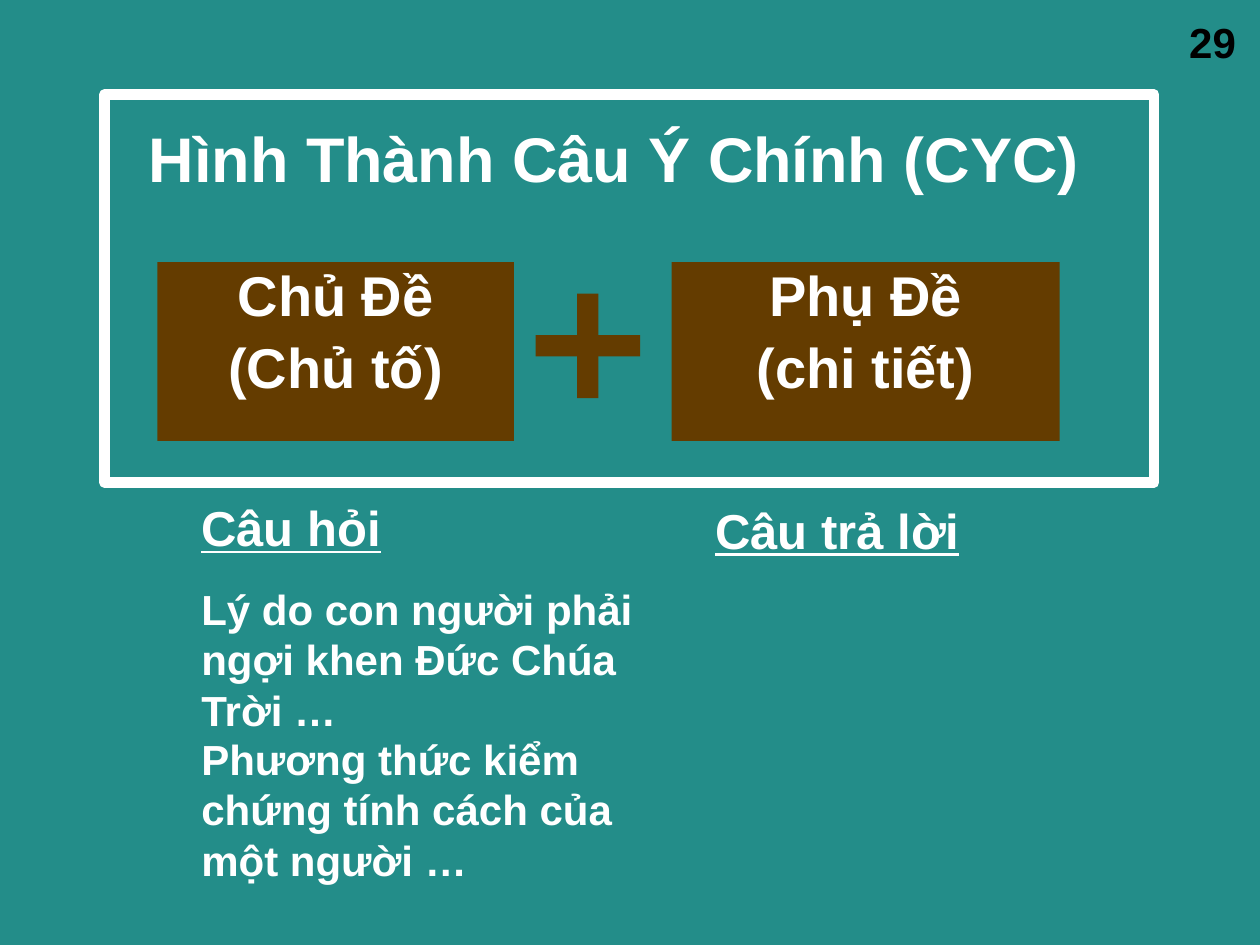
from lxml import etree
from pptx import Presentation
from pptx.dml.color import RGBColor
from pptx.enum.shapes import MSO_SHAPE as Shape
from pptx.enum.text import MSO_ANCHOR as Anchor, MSO_AUTO_SIZE as AutoSize, PP_ALIGN as Align
from pptx.oxml.ns import qn
from pptx.util import Inches, Pt

TEAL = RGBColor(0x23, 0x8D, 0x89)
BROWN = RGBColor(0x64, 0x3C, 0x00)
WHITE = RGBColor(0xFF, 0xFF, 0xFF)
BLACK = RGBColor(0x00, 0x00, 0x00)


def inches(*lengths):
    return [Inches(length) for length in lengths]


def cast_text_shadow(run):
    fill = run.font.fill._xPr.find(qn("a:solidFill"))
    effects = etree.Element(qn("a:effectLst"))
    shadow = etree.SubElement(effects, qn("a:outerShdw"), blurRad="38100",
                              dist="38100", dir="2700000", algn="tl")
    black = etree.SubElement(shadow, qn("a:srgbClr"), val="000000")
    etree.SubElement(black, qn("a:alpha"), val="75000")
    fill.addnext(effects)


def write(paragraph, words, size, color=WHITE, underline=None, shadow=False):
    run = paragraph.add_run()
    run.text = words
    font = run.font
    font.name = "Arial"
    font.size = Pt(size)
    font.bold = True
    font.underline = underline
    font.color.rgb = color
    if shadow:
        cast_text_shadow(run)


def add_title(slide, words, box):
    frame = slide.shapes.add_textbox(*inches(*box)).text_frame
    frame.word_wrap = True
    frame.vertical_anchor = Anchor.MIDDLE
    heading = frame.paragraphs[0]
    heading.alignment = Align.CENTER
    heading.line_spacing = 0.9
    write(heading, words, 36)


def add_label(slide, words, box, size, wrap=False, **style):
    frame = slide.shapes.add_textbox(*inches(*box)).text_frame
    frame.word_wrap = wrap
    frame.auto_size = AutoSize.SHAPE_TO_FIT_TEXT
    write(frame.paragraphs[0], words, size, **style)


def add_block(shapes, box):
    block = shapes.add_shape(Shape.RECTANGLE, *inches(*box))
    block.shadow.inherit = False
    block.fill.solid()
    block.fill.fore_color.rgb = BROWN
    block.line.fill.background()
    return block


def add_part(slide, lines, box):
    frame = add_block(slide.shapes, box).text_frame
    frame.word_wrap = True
    frame.vertical_anchor = Anchor.TOP
    for index, words in enumerate(lines):
        paragraph = frame.add_paragraph() if index else frame.paragraphs[0]
        paragraph.alignment = Align.CENTER
        paragraph.line_spacing = 0.9
        if index:
            paragraph.space_before = Pt(6.4)
        write(paragraph, words, 32)


def add_plus(slide):
    plus = slide.shapes.add_group_shape()
    for angle in (0, 90):
        add_block(plus.shapes, (4.58, 2.33, 0.17, 0.83)).rotation = angle


def add_border(slide, box):
    border = slide.shapes.add_shape(Shape.RECTANGLE, *inches(*box))
    border.shadow.inherit = False
    border.fill.background()
    border.line.color.rgb = WHITE
    border.line.width = Pt(6)


def main():
    deck = Presentation()
    deck.slide_width, deck.slide_height = inches(10, 7.5)
    slide = deck.slides.add_slide(deck.slide_layouts[6])
    slide.background.fill.solid()
    slide.background.fill.fore_color.rgb = TEAL

    add_title(slide, "Hình Thành Câu Ý Chính (CYC)", (0.75, 0.75, 8.25, 1.08))
    add_part(slide, ("Chủ Đề", "(Chủ tố)"), (1.25, 2.08, 2.83, 1.42))
    add_part(slide, ("Phụ Đề", "(chi tiết)"), (5.33, 2.08, 3.08, 1.42))
    add_plus(slide)
    add_border(slide, (0.83, 0.75, 8.33, 3.08))

    for words, box in (("Câu hỏi", (1.5, 3.9, 1.64, 0.57)),
                       ("Câu trả lời", (5.58, 3.92, 2.16, 0.57))):
        add_label(slide, words, box, 28, underline=True, shadow=True)
    for words, top in (("Lý do con người phải ngợi khen Đức Chúa Trời …", 4.58),
                       ("Phương thức kiểm chứng tính cách của một người …", 5.77)):
        add_label(slide, words, (1.5, top, 3.67, 1.31), 24, wrap=True, shadow=True)
    add_label(slide, "29", (9.34, 0.08, 0.57, 0.5), 24, color=BLACK)

    deck.save("out.pptx")


if __name__ == "__main__":
    main()
